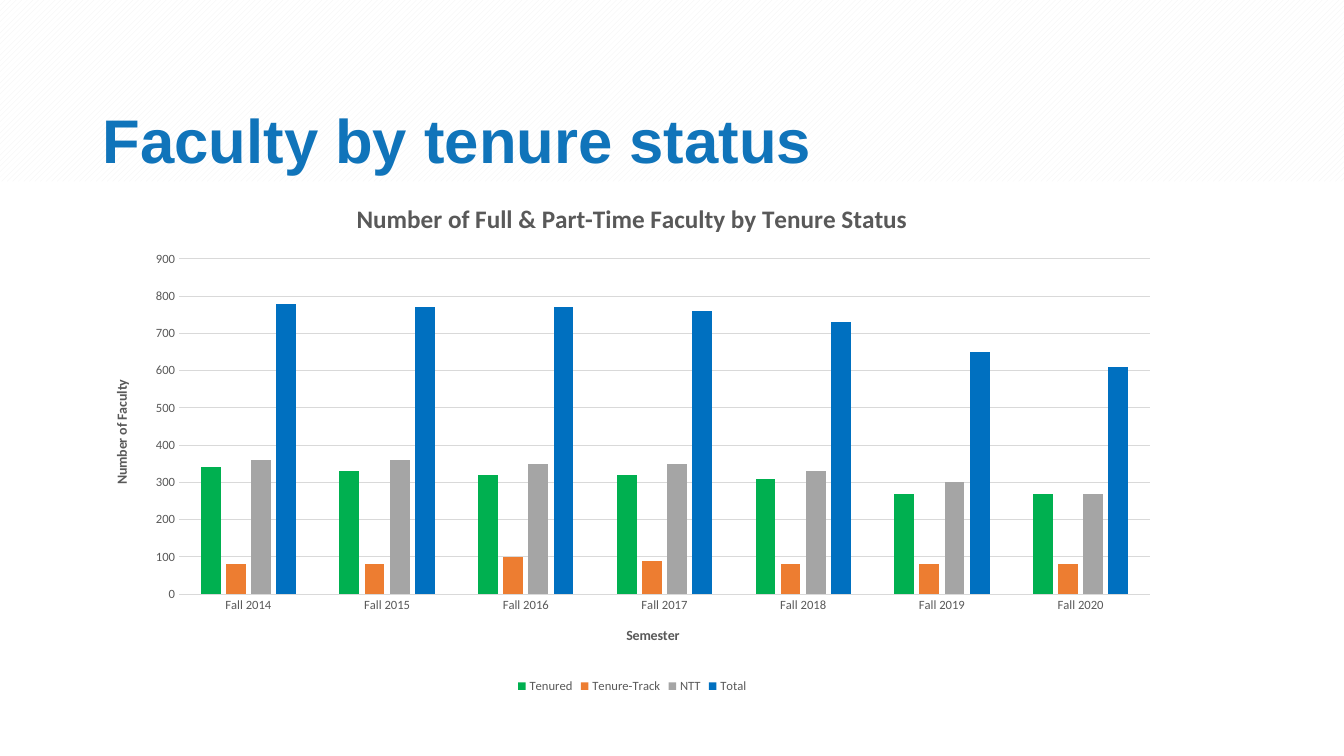
import pptx
import pptx.chart.data
import pptx.dml.color
import pptx.enum.chart
import pptx.enum.dml
import pptx.enum.shapes
import pptx.enum.text
import pptx.oxml
import pptx.oxml.ns
import pptx.util

Inches = pptx.util.Inches
Pt = pptx.util.Pt
rgb = pptx.dml.color.RGBColor.from_string

THEME = {
    "heading_font": "Arial", "chart_font": "Calibri",
    "heading": "1074BA", "text": "595959", "grid": "D9D9D9",
    "hatch": "F2F2F2", "paper": "FFFFFF",
    "heading_size": 44, "chart_title_size": 18,
    "axis_title_size": 10, "label_size": 9,
}

SEMESTERS = [f"Fall {year}" for year in range(2014, 2021)]
FACULTY = [
    ("Tenured", "00B050", (340, 330, 320, 320, 310, 270, 270)),
    ("Tenure-Track", "ED7D31", (80, 80, 100, 90, 80, 80, 80)),
    ("NTT", "A5A5A5", (360, 360, 350, 350, 330, 300, 270)),
    ("Total", "0070C0", (780, 770, 770, 760, 730, 650, 610)),
]


def style_font(font, size, bold=False):
    font.name = THEME["chart_font"]
    font.size = Pt(size)
    font.bold = bold
    font.color.rgb = rgb(THEME["text"])


def write_title(title, text, size):
    title.text_frame.text = text
    style_font(title.text_frame.paragraphs[0].font, size, bold=True)


presentation = pptx.Presentation()
presentation.slide_width = Inches(13.33)
presentation.slide_height = Inches(7.5)
slide = presentation.slides.add_slide(presentation.slide_layouts[5])

band = slide.shapes.add_shape(
    pptx.enum.shapes.MSO_SHAPE.RECTANGLE, 0, 0, Inches(13.33), Inches(1.8))
band.shadow.inherit = False
band.line.fill.background()
band.fill.patterned()
band.fill.pattern = pptx.enum.dml.MSO_PATTERN.WIDE_UPWARD_DIAGONAL
band.fill.fore_color.rgb = rgb(THEME["hatch"])
band.fill.back_color.rgb = rgb(THEME["paper"])

heading = slide.shapes.title
heading.left, heading.top = Inches(0.92), Inches(0.4)
heading.width, heading.height = Inches(11.5), Inches(1.4)
heading.text_frame.text = "Faculty by tenure status"
heading.text_frame.word_wrap = True
heading.text_frame.auto_size = pptx.enum.text.MSO_AUTO_SIZE.NONE
heading.text_frame.vertical_anchor = pptx.enum.text.MSO_ANCHOR.BOTTOM
heading_line = heading.text_frame.paragraphs[0]
heading_line.alignment = pptx.enum.text.PP_ALIGN.LEFT
heading_line.line_spacing = 0.9
heading_line.font.name = THEME["heading_font"]
heading_line.font.size = Pt(THEME["heading_size"])
heading_line.font.bold = True
heading_line.font.color.rgb = rgb(THEME["heading"])

tenure_data = pptx.chart.data.CategoryChartData()
tenure_data.categories = SEMESTERS
for name, color, counts in FACULTY:
    tenure_data.add_series(name, counts)
chart = slide.shapes.add_chart(
    pptx.enum.chart.XL_CHART_TYPE.COLUMN_CLUSTERED,
    Inches(0.92), Inches(1.8), Inches(10.7), Inches(5.12), tenure_data).chart
slide.shapes._spTree.append(heading._element)

style_font(chart.font, THEME["label_size"])
chart.has_title = True
write_title(chart.chart_title, "Number of Full & Part-Time Faculty by Tenure Status",
            THEME["chart_title_size"])
chart.has_legend = True
chart.legend.position = pptx.enum.chart.XL_LEGEND_POSITION.BOTTOM
chart.legend.include_in_layout = False
style_font(chart.legend.font, THEME["label_size"])

columns = chart.plots[0]
columns.gap_width = 219
columns.overlap = -27
columns.vary_by_categories = False
for series, (name, color, counts) in zip(columns.series, FACULTY):
    series.format.fill.solid()
    series.format.fill.fore_color.rgb = rgb(color)
    series.invert_if_negative = False

for axis, title in ((chart.category_axis, "Semester"),
                    (chart.value_axis, "Number of Faculty")):
    write_title(axis.axis_title, title, THEME["axis_title_size"])
    style_font(axis.tick_labels.font, THEME["label_size"])
    axis.major_tick_mark = pptx.enum.chart.XL_TICK_MARK.NONE
    axis.minor_tick_mark = pptx.enum.chart.XL_TICK_MARK.NONE
chart.value_axis.minimum_scale = 0
chart.value_axis.maximum_scale = 900
chart.value_axis.major_unit = 100
chart.value_axis.format.line.fill.background()
for line in (chart.category_axis.format.line,
             chart.value_axis.major_gridlines.format.line):
    line.color.rgb = rgb(THEME["grid"])
    line.width = Pt(0.75)

plot_area = chart._chartSpace.chart.plotArea
for automatic in plot_area.findall(pptx.oxml.ns.qn("c:layout")):
    plot_area.remove(automatic)
plot_area.insert(0, pptx.oxml.parse_xml(
    f'<c:layout {pptx.oxml.ns.nsdecls("c")}><c:manualLayout>'
    '<c:layoutTarget val="inner"/><c:xMode val="edge"/><c:yMode val="edge"/>'
    '<c:x val="0.08"/><c:y val="0.15"/><c:w val="0.9"/><c:h val="0.65"/>'
    '</c:manualLayout></c:layout>'))

presentation.save("out.pptx")
